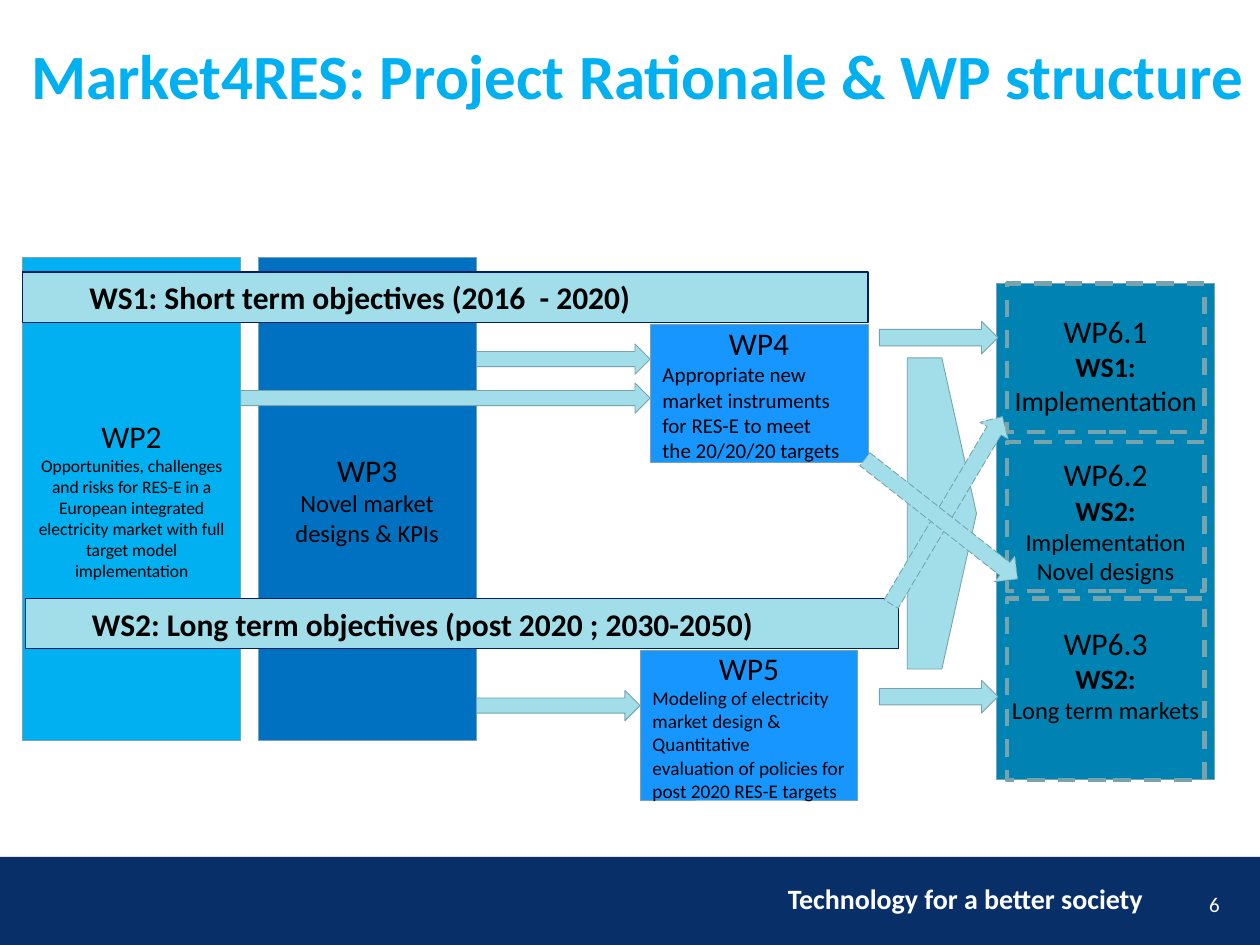
import dataclasses

import pptx
import pptx.dml.color
import pptx.enum.dml
import pptx.enum.shapes
import pptx.enum.text
import pptx.util

SHAPES = pptx.enum.shapes.MSO_SHAPE
DASHES = pptx.enum.dml.MSO_LINE
ALIGN = pptx.enum.text.PP_ALIGN
ANCHOR = pptx.enum.text.MSO_ANCHOR

CELL = pptx.util.Inches(0.1)
COLUMNS, ROWS = 100, 75
PACKAGE_WIDTH = 17.3
ARROW_HEIGHT = 2.4


@dataclasses.dataclass(frozen=True)
class Theme:
    font: str = "Calibri"
    ink: str = "000000"
    white: str = "FFFFFF"
    navy: str = "082F68"
    sky: str = "00B0F0"
    blue: str = "0070C0"
    bright: str = "1796FF"
    teal: str = "0082B3"
    pale: str = "A1DEE9"
    outline: str = "77A4AC"
    bar_outline: str = "002060"
    title: int = 36
    heading: int = 18
    stream: int = 16
    body: int = 14
    note: int = 12
    small: int = 11
    tiny: int = 10


THEME = Theme()


@dataclasses.dataclass(frozen=True)
class Box:
    """Area measured in grid columns and rows."""
    left: float
    top: float
    width: float
    height: float

    def inside(self, left, top, width, height):
        return Box(self.left + left, self.top + top, width, height)

    def lengths(self):
        return [round(value * CELL) for value in dataclasses.astuple(self)]


@dataclasses.dataclass(frozen=True)
class Line:
    """One paragraph of text with its look."""
    text: str
    size: int
    bold: bool = False
    align: ALIGN = ALIGN.CENTER
    color: str = THEME.ink
    space_before: int = 0


def rgb(color):
    return pptx.dml.color.RGBColor.from_string(color)


def write(shape, lines, anchor=ANCHOR.MIDDLE):
    frame = shape.text_frame
    frame.word_wrap = True
    frame.vertical_anchor = anchor
    for index, line in enumerate(lines):
        paragraph = frame.add_paragraph() if index else frame.paragraphs[0]
        paragraph.alignment = line.align
        if line.space_before:
            paragraph.space_before = pptx.util.Pt(line.space_before)
        run = paragraph.add_run()
        run.text = line.text
        run.font.name = THEME.font
        run.font.size = pptx.util.Pt(line.size)
        run.font.bold = line.bold
        run.font.color.rgb = rgb(line.color)
    return frame


def add_shape(slide, box, fill=None, kind=SHAPES.RECTANGLE,
              outline=THEME.outline, weight=0.5, dash=None):
    shape = slide.shapes.add_shape(kind, *box.lengths())
    shape.shadow.inherit = False
    if fill:
        shape.fill.solid()
        shape.fill.fore_color.rgb = rgb(fill)
    else:
        shape.fill.background()
    if outline:
        shape.line.color.rgb = rgb(outline)
        shape.line.width = pptx.util.Pt(weight)
    else:
        shape.line.fill.background()
    if dash:
        shape.line.dash_style = dash
    return shape


def add_arrow(slide, box, rotation=0, dash=None):
    arrow = add_shape(slide, box, THEME.pale, SHAPES.RIGHT_ARROW, dash=dash)
    arrow.rotation = rotation


def add_text(slide, box, line, anchor=ANCHOR.TOP):
    return write(slide.shapes.add_textbox(*box.lengths()), [line], anchor)


def draw_title(slide, box):
    frame = add_text(slide, box, Line("Market4RES: Project Rationale & WP structure",
                                      THEME.title, True, color=THEME.sky))
    frame.margin_left = frame.margin_right = frame.margin_top = frame.margin_bottom = 0


def draw_footer(slide, box):
    add_shape(slide, box, THEME.navy, outline=None)
    add_text(slide, box.inside(48.4, 1.5, 43.3, 3.7),
             Line("Technology for a better society", THEME.stream, True,
                  ALIGN.RIGHT, THEME.white))
    add_text(slide, box.inside(92.2, 2.2, 5.6, 3.1),
             Line("6", THEME.note, False, ALIGN.RIGHT, THEME.white), ANCHOR.MIDDLE)


def draw_foundation(slide, box):
    """WP2 and WP3 columns with the arrows that feed WP4 and WP5."""
    second = add_shape(slide, box.inside(0, 0, PACKAGE_WIDTH, box.height), THEME.sky)
    write(second, [
        Line("WP2", THEME.heading),
        Line("Opportunities, challenges and risks for RES-E in a European integrated "
             "electricity market with full target model implementation", THEME.tiny)])
    add_arrow(slide, box.inside(30.9, 34.4, 18.1, ARROW_HEIGHT))
    add_arrow(slide, box.inside(23.8, 6.9, 26, ARROW_HEIGHT))
    third = add_shape(slide, box.inside(18.7, 0, PACKAGE_WIDTH, box.height), THEME.blue)
    write(third, [Line("WP3", THEME.heading),
                  Line("Novel market designs & KPIs", THEME.body)])
    add_arrow(slide, box.inside(PACKAGE_WIDTH, 10, 32.5, ARROW_HEIGHT))


def draw_stream(slide, box, objective, package_left, package, details, size):
    """Objective bar along the top, with its work package hanging below."""
    bar_height, gap = 4, 0.15
    bar = add_shape(slide, box.inside(0, 0, box.width, bar_height), THEME.pale,
                    outline=THEME.bar_outline, weight=0.75)
    frame = write(bar, [Line(objective, THEME.heading, True, ALIGN.LEFT)], ANCHOR.TOP)
    frame.margin_left = pptx.util.Inches(0.53)
    top = bar_height + gap
    shape = add_shape(slide, box.inside(package_left, top, PACKAGE_WIDTH,
                                        box.height - top), THEME.bright)
    write(shape, [Line(package, THEME.heading)]
          + [Line(detail, size, align=ALIGN.LEFT) for detail in details])


def draw_outcomes(slide, box):
    """WP6 column, split by dashed frames into three parts."""
    parts = [
        ("WP6.1", "WS1:", ["Implementation"], THEME.stream),
        ("WP6.2", "WS2:", ["Implementation", "Novel designs"], THEME.body),
        ("WP6.3", "WS2:", ["Long term markets"], THEME.body),
    ]
    lines = []
    for name, stream, details, size in parts:
        lines.append(Line(name, THEME.heading, space_before=22 if lines else 0))
        lines.append(Line(stream, THEME.stream, True))
        lines.extend(Line(detail, size) for detail in details)
    column = add_shape(slide, box, THEME.teal)
    write(column, lines).margin_bottom = pptx.util.Inches(0.26)
    for top, height in [(0, 11.8), (12.6, 11.8), (25, 14.4)]:
        add_shape(slide, box.inside(0.8, top, 15.7, height), weight=2.5,
                  dash=DASHES.DASH)


def draw_links(slide, box):
    """Straight and crossing arrows that lead from WP4 and WP5 to WP6."""
    add_shape(slide, box.inside(5.5, 2.9, 5.5, 24.7), THEME.pale, SHAPES.PENTAGON)
    for top in (0, 28.5):
        add_arrow(slide, box.inside(3.3, top, 9.4, 2.6))
    add_arrow(slide, box.inside(0, 13.7, 17.3, 2.6), 300.7, DASHES.LONG_DASH)
    add_arrow(slide, box.inside(0.5, 14.4, 15.4, 2.6), 38.1, DASHES.LONG_DASH)


def main():
    presentation = pptx.Presentation()
    presentation.slide_width = COLUMNS * CELL
    presentation.slide_height = ROWS * CELL
    slide = presentation.slides.add_slide(presentation.slide_layouts[6])
    draw_footer(slide, Box(0, 68, COLUMNS, 7))
    draw_title(slide, Box(0, 2.9, 101.2, 12.5))
    draw_foundation(slide, Box(1.8, 20.4, 49.8, 38.4))
    draw_stream(slide, Box(1.8, 21.6, 67.1, 15.1),
                "WS1: Short term objectives (2016  - 2020)", 49.8, "WP4",
                ["Appropriate new market instruments for RES-E to meet",
                 "the 20/20/20 targets"], THEME.note)
    draw_stream(slide, Box(2, 47.5, 69.3, 16),
                "WS2: Long term objectives (post 2020 ; 2030-2050)", 48.8, "WP5",
                ["Modeling of electricity market design & Quantitative",
                 "evaluation of policies for post 2020 RES-E targets"], THEME.small)
    draw_outcomes(slide, Box(79.1, 22.5, PACKAGE_WIDTH, 39.4))
    draw_links(slide, Box(66.5, 25.5, 17.3, 31.1))
    presentation.save("out.pptx")


if __name__ == "__main__":
    main()
